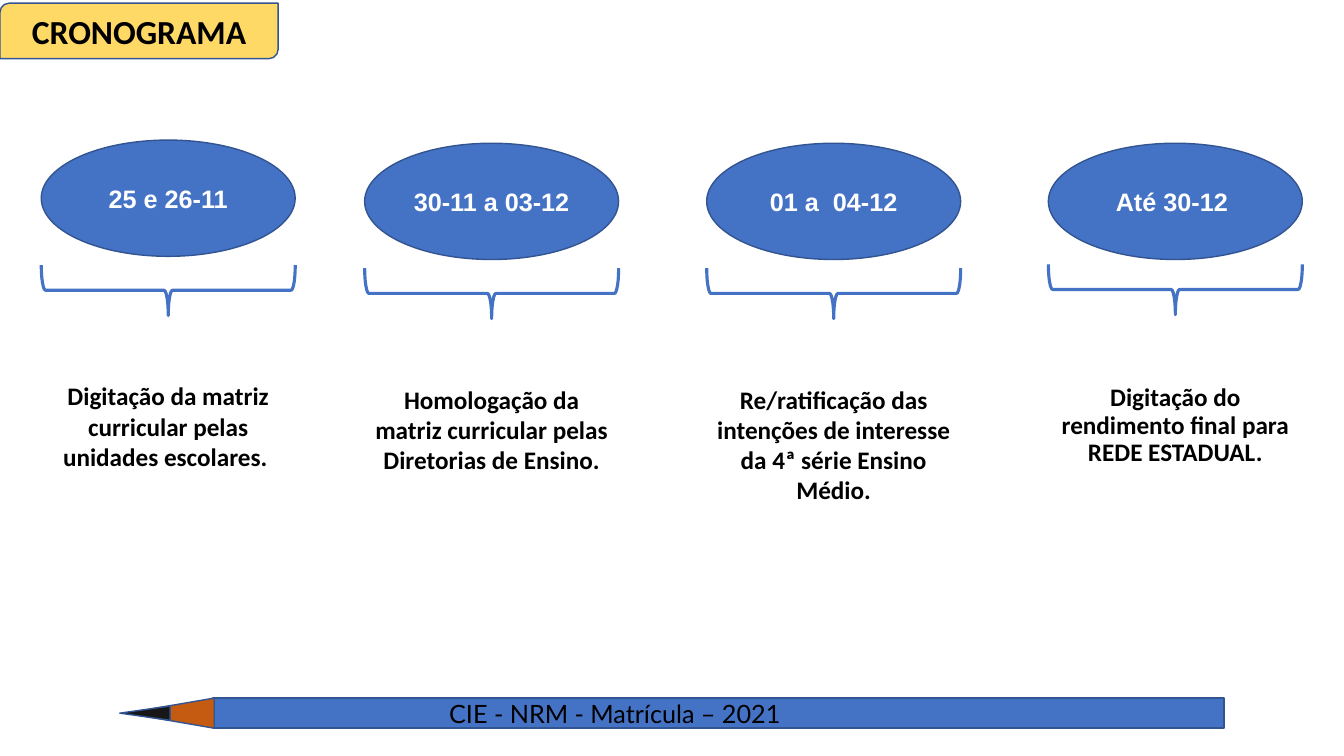
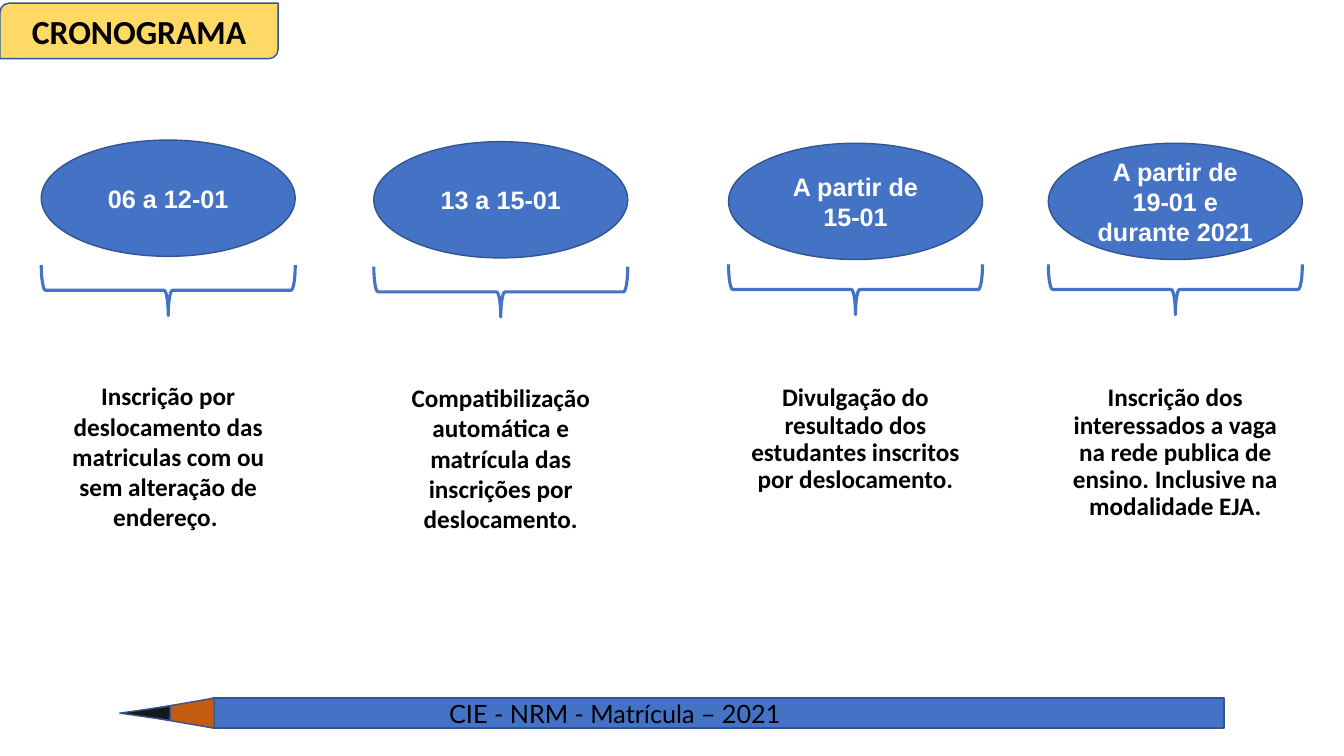
from dataclasses import dataclass

from pptx import Presentation
from pptx import util as u
from pptx.dml.color import RGBColor
from pptx.enum import shapes, text

BLUE, EDGE, GOLD = "4472C4", "325491", "FFD966"
WOOD, LEAD, BLACK, WHITE = "C55A11", "181717", "000000", "FFFFFF"
KIND = shapes.MSO_SHAPE
CENTER = text.PP_ALIGN.CENTER

HEAD = {"name": "Calibri", "size": u.Pt(24), "bold": True}
DATE = {"name": "Arial", "size": u.Pt(18), "bold": True}
NOTE = {"name": "Calibri", "size": u.Pt(18), "bold": True}
FOOT = {"name": "Lato", "size": u.Pt(18), "bold": False}

# Column measures in centimetres
WIDE, OVAL, BRACE = 6.4, 2.93, 1.27


@dataclass(frozen=True)
class Box:
    x: float
    y: float
    w: float
    h: float

    def cm(self) -> list:
        return [u.Cm(v) for v in (self.x, self.y, self.w, self.h)]

    def turn(self) -> "Box":
        """Frame that covers this box once rotated a quarter turn."""
        gap = (self.w - self.h) / 2
        return Box(self.x + gap, self.y - gap, self.h, self.w)


@dataclass(frozen=True)
class Step:
    x: float
    y: float
    date: str
    note: str
    tight: bool = False


TAB = Box(0, 0.08, 7.01, 1.4)
BAR = Box(5.37, 17.59, 25.48, 0.76)
WOOD_TIP = Box(3.19, 17.59, 2.21, 0.76)
LEAD_TIP = Box(3.02, 17.79, 1.27, 0.36)
LABEL = Box(11.07, 17.48, 16.51, 1.02)

SLIDES = [
    [
        Step(1.04, 3.53, "25 e 26-11",
             "Digitação da matriz curricular pelas unidades escolares. "),
        Step(9.19, 3.61, "30-11 a 03-12",
             "Homologação da matriz curricular pelas Diretorias de Ensino."),
        Step(17.81, 3.61, "01 a  04-12",
             "Re/ratificação das intenções de interesse da 4ª série Ensino Médio."),
        Step(26.42, 3.61, "Até 30-12 ",
             "Digitação do rendimento final para REDE ESTADUAL.", True),
    ],
    [
        Step(1.04, 3.53, "06 a 12-01",
             "Inscrição por deslocamento das matriculas com ou sem alteração "
             "de endereço. "),
        Step(9.42, 3.57, "13 a 15-01",
             "Compatibilização automática e matrícula das inscrições por "
             "deslocamento."),
        Step(18.36, 3.61, "A partir de 15-01",
             "Divulgação do resultado dos estudantes inscritos por "
             "deslocamento.", True),
        Step(26.42, 3.61, "A partir de 19-01 e durante 2021 ",
             "Inscrição dos interessados a vaga na rede publica de ensino. "
             "Inclusive na modalidade EJA.", True),
    ],
]


def rgb(code: str) -> RGBColor:
    return RGBColor.from_string(code)


def assign(item, form: dict) -> None:
    for key, val in form.items():
        setattr(item, key, val)


def write(shape, words: str, font: dict, color: str, para: dict):
    frame = shape.text_frame
    frame.word_wrap = True
    frame.text = words
    line = frame.paragraphs[0]
    assign(line, para)
    assign(line.runs[0].font, font)
    line.runs[0].font.color.rgb = rgb(color)


def draw(slide, kind, box: Box, fill: str = "", edge: str = EDGE,
         wide: float = 1, spin: int = 0):
    """Add a preset shape; an empty fill leaves it open."""
    shape = slide.shapes.add_shape(kind, *box.cm())
    shape.shadow.inherit = False
    shape.rotation = spin
    if fill:
        shape.fill.solid()
        shape.fill.fore_color.rgb = rgb(fill)
    else:
        shape.fill.background()
    shape.line.color.rgb = rgb(edge)
    shape.line.width = u.Pt(wide)
    return shape


def label(slide, box: Box, words: str, font: dict, para: dict) -> None:
    write(slide.shapes.add_textbox(*box.cm()), words, font, BLACK, para)


def pencil(slide) -> None:
    draw(slide, KIND.RECTANGLE, BAR, BLUE)
    for box, fill in ((WOOD_TIP, WOOD), (LEAD_TIP, LEAD)):
        draw(slide, KIND.ISOSCELES_TRIANGLE, box.turn(), fill, spin=270)
    label(slide, LABEL, "CIE - NRM - Matrícula – 2021", FOOT, {})


def header(slide, words: str) -> None:
    draw(slide, KIND.ROUND_2_DIAG_RECTANGLE, TAB, GOLD)
    title = slide.shapes.title
    assign(title, dict(zip(("left", "top", "width", "height"), TAB.cm())))
    write(title, words, HEAD, BLACK, {"alignment": CENTER})
    assign(title.text_frame, {"auto_size": text.MSO_AUTO_SIZE.NONE,
                              "vertical_anchor": text.MSO_ANCHOR.MIDDLE})
    # The title stands in front of its tab
    slide.shapes._spTree.append(title._element)


def column(slide, step: Step) -> None:
    """Date oval, brace below it, and the task it points to."""
    drop, fall = (3.05, 5.97) if step.tight else (3.15, 5.94)
    para = {"alignment": CENTER}
    oval = draw(slide, KIND.FLOWCHART_CONNECTOR,
                Box(step.x, step.y, WIDE, OVAL), BLUE)
    write(oval, step.date, DATE, WHITE, para)
    brace = Box(step.x, step.y + drop, WIDE, BRACE)
    draw(slide, KIND.RIGHT_BRACE, brace.turn(), edge=BLUE, wide=2.25, spin=90)
    if step.tight:
        para = para | {"line_spacing": 0.9, "space_after": u.Pt(5)}
    label(slide, Box(step.x, step.y + fall, WIDE, 2.5), step.note, NOTE, para)


def main() -> None:
    deck = Presentation()
    assign(deck, {"slide_width": u.Cm(33.87), "slide_height": u.Cm(19.05)})
    for steps in SLIDES:
        slide = deck.slides.add_slide(deck.slide_layouts[5])
        pencil(slide)
        header(slide, "CRONOGRAMA")
        for step in steps:
            column(slide, step)
    deck.save("out.pptx")


if __name__ == "__main__":
    main()
